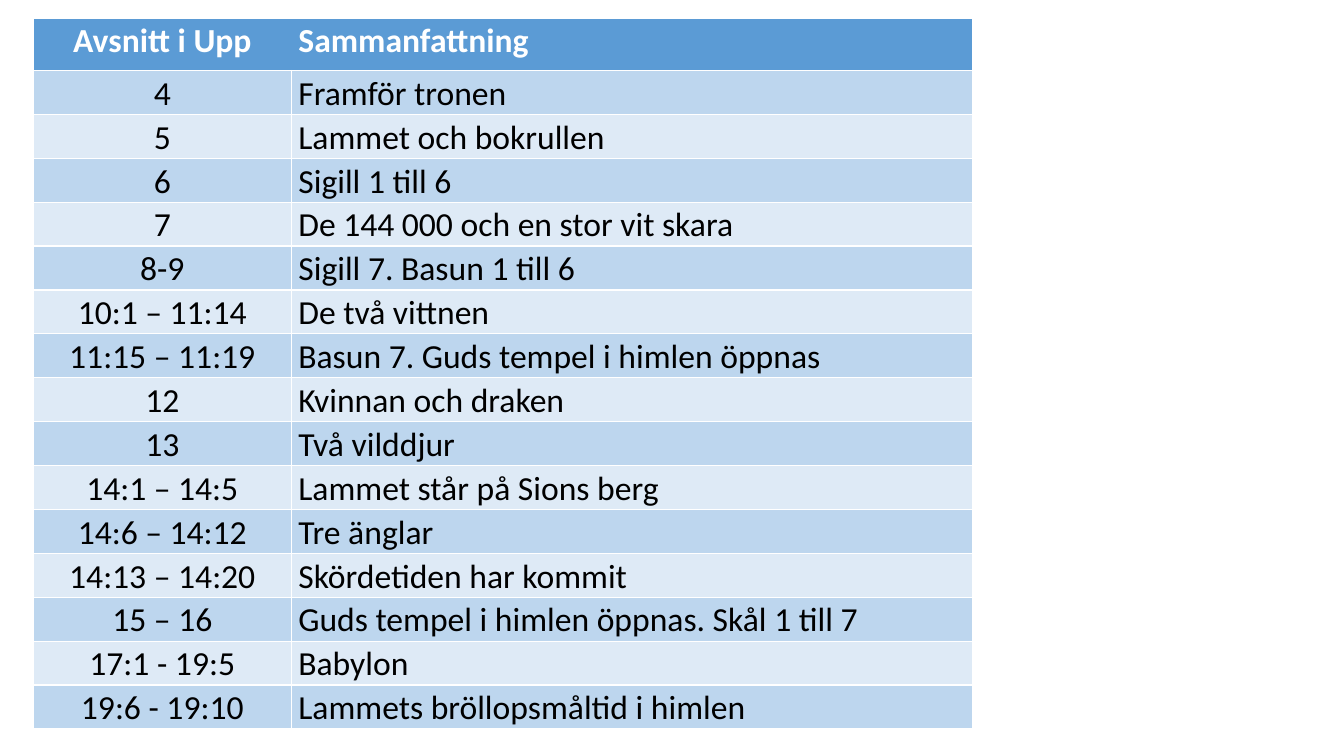
from dataclasses import dataclass

from lxml import etree
from pptx import Presentation
from pptx.dml.color import RGBColor
from pptx.enum.text import MSO_ANCHOR, PP_ALIGN
from pptx.oxml.ns import qn
from pptx.util import Inches, Pt

CENTER, LEFT = PP_ALIGN.CENTER, PP_ALIGN.LEFT
TOP = MSO_ANCHOR.TOP
BLANK_LAYOUT = 6


@dataclass(frozen=True)
class Theme:
    font: str = "Calibri"
    size: int = 24
    header_text: str = "FFFFFF"
    body_text: str = "000000"
    header_fill: str = "5B9BD5"
    band_fills: tuple = ("BDD6EE", "DEEAF6")
    border: str = "FFFFFF"
    border_width: int = 1


THEME = Theme()

HEADER = ("Avsnitt i Upp", "Sammanfattning")
SECTIONS = [
    ("4", "Framför tronen"),
    ("5", "Lammet och bokrullen"),
    ("6", "Sigill 1 till 6"),
    ("7", "De 144 000 och en stor vit skara"),
    ("8-9", "Sigill 7. Basun 1 till 6"),
    ("10:1 – 11:14", "De två vittnen"),
    ("11:15 – 11:19", "Basun 7. Guds tempel i himlen öppnas"),
    ("12", "Kvinnan och draken"),
    ("13", "Två vilddjur"),
    ("14:1 – 14:5", "Lammet står på Sions berg"),
    ("14:6 – 14:12", "Tre änglar"),
    ("14:13 – 14:20", "Skördetiden har kommit"),
    ("15 – 16", "Guds tempel i himlen öppnas. Skål 1 till 7"),
    ("17:1 - 19:5", "Babylon"),
    ("19:6 - 19:10", "Lammets bröllopsmåltid i himlen"),
]
COLUMN_WIDTHS = (2.56, 6.76)
COLUMN_ALIGNMENTS = (CENTER, LEFT)
HEADER_HEIGHT, ROW_HEIGHT = 0.52, 0.43


def set_borders(cell, hidden_side):
    """Line all sides of the cell except hidden_side; call before filling it."""
    properties = cell._tc.get_or_add_tcPr()
    for side in "LRTB":
        line = etree.SubElement(properties, qn(f"a:ln{side}"), w=str(Pt(THEME.border_width)))
        if side == hidden_side:
            etree.SubElement(line, qn("a:noFill"))
        else:
            fill = etree.SubElement(line, qn("a:solidFill"))
            etree.SubElement(fill, qn("a:srgbClr"), val=THEME.border)


def format_cell(cell, text, alignment, fill, color, bold, hidden_side=None):
    cell.margin_left = cell.margin_right = Inches(0.07)
    cell.margin_top = cell.margin_bottom = 0
    cell.vertical_anchor = TOP
    set_borders(cell, hidden_side)
    cell.fill.solid()
    cell.fill.fore_color.rgb = RGBColor.from_string(fill)
    cell.text = text
    para = cell.text_frame.paragraphs[0]
    para.alignment = alignment
    para.line_spacing = 1.07
    para.space_after = Pt(8)
    para.font.name = THEME.font
    para.font.size = Pt(THEME.size)
    para.font.bold = bold
    para.font.color.rgb = RGBColor.from_string(color)


def add_section_table(page):
    height = HEADER_HEIGHT + ROW_HEIGHT * len(SECTIONS)
    table = page.shapes.add_table(
        len(SECTIONS) + 1, len(HEADER),
        Inches(0.33), Inches(0.18), Inches(sum(COLUMN_WIDTHS)), Inches(height),
    ).table
    for column, width in zip(table.columns, COLUMN_WIDTHS):
        column.width = Inches(width)
    for index, texts in enumerate([HEADER, *SECTIONS]):
        is_header = index == 0
        table.rows[index].height = Inches(HEADER_HEIGHT if is_header else ROW_HEIGHT)
        fill = THEME.header_fill if is_header else THEME.band_fills[(index - 1) % 2]
        color = THEME.header_text if is_header else THEME.body_text
        for column, (text, alignment) in enumerate(zip(texts, COLUMN_ALIGNMENTS)):
            hidden_side = "RL"[column] if is_header else None
            format_cell(table.cell(index, column), text, alignment, fill, color,
                        is_header, hidden_side)


def main():
    deck = Presentation()
    deck.slide_width, deck.slide_height = Inches(13.33), Inches(7.5)
    page = deck.slides.add_slide(deck.slide_layouts[BLANK_LAYOUT])
    add_section_table(page)
    deck.save("out.pptx")


if __name__ == "__main__":
    main()
